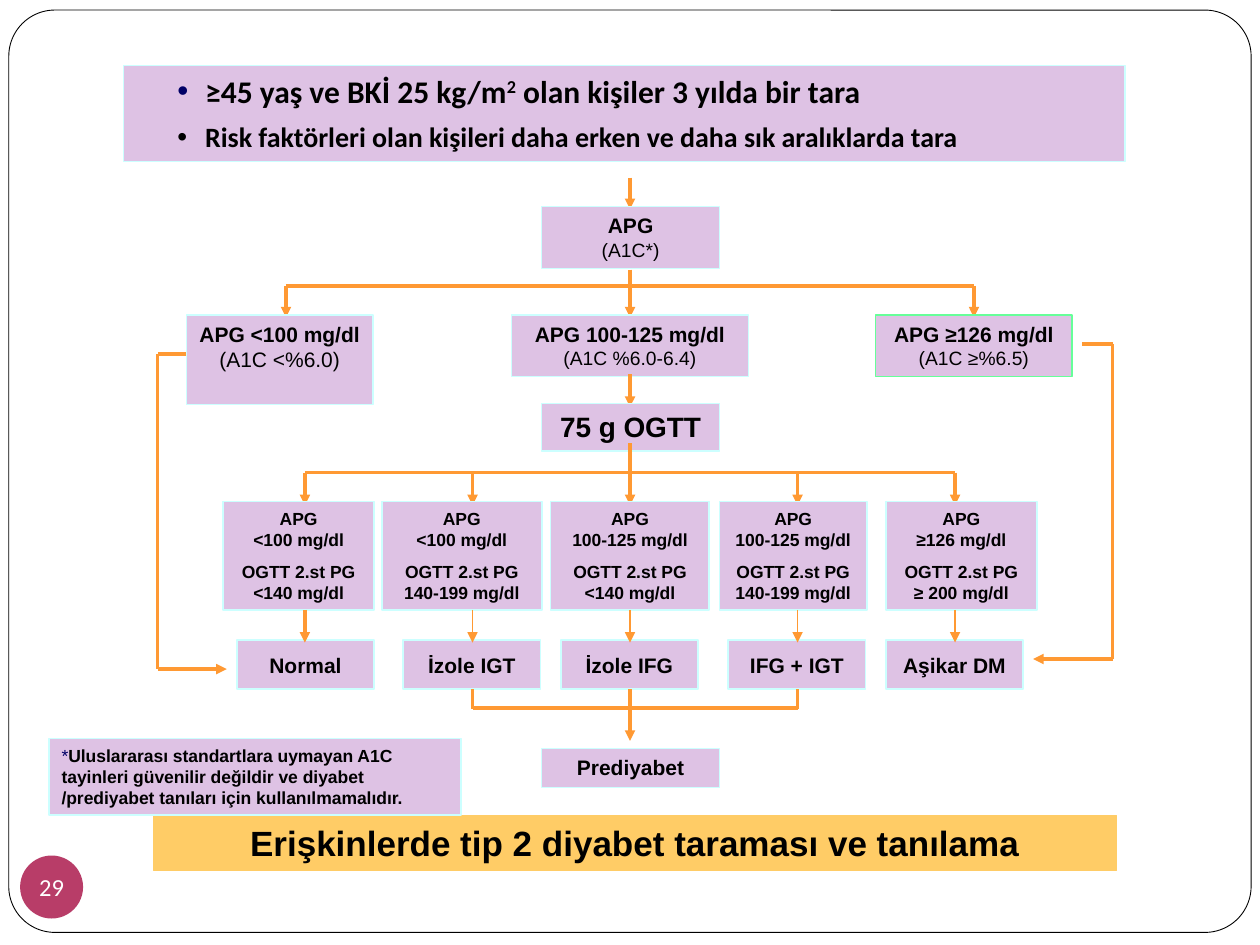
from dataclasses import dataclass

from lxml.etree import SubElement
from pptx import Presentation
from pptx.dml.color import RGBColor
from pptx.enum.shapes import MSO_CONNECTOR, MSO_SHAPE
from pptx.enum.text import MSO_ANCHOR, PP_ALIGN
from pptx.oxml.ns import qn
from pptx.util import Inches, Pt


@dataclass(frozen=True)
class Theme:
    lilac: str = "DEC2E4"
    pale: str = "CCFFFF"
    green: str = "66FF99"
    orange: str = "FF9933"
    amber: str = "FFCC66"
    berry: str = "B83D68"
    navy: str = "000066"
    black: str = "000000"
    white: str = "FFFFFF"
    sans: str = "Arial"
    humanist: str = "Calibri"
    title: int = 20
    lead: int = 18
    large: int = 16
    badge: int = 14
    body: int = 12
    detail: int = 11
    small: int = 10


THEME = Theme()
COLUMNS = (2.42, 3.75, 5, 6.33, 7.58)
CENTER = 5


def rgb(code):
    return RGBColor.from_string(code)


def style_font(font, size, bold=False, color=THEME.black, name=THEME.sans):
    font.size = Pt(size)
    font.bold = bold
    font.name = name
    font.color.rgb = rgb(color)


def add_box(page, bounds, fill=THEME.lilac, line=THEME.pale, weight=0.75,
            kind=MSO_SHAPE.RECTANGLE, anchor=MSO_ANCHOR.TOP):
    box = page.shapes.add_shape(kind, *map(Inches, bounds))
    box.shadow.inherit = False
    if fill:
        box.fill.solid()
        box.fill.fore_color.rgb = rgb(fill)
    else:
        box.fill.background()
    if line:
        box.line.color.rgb = rgb(line)
        box.line.width = Pt(weight)
    else:
        box.line.fill.background()
    box.text_frame.word_wrap = True
    box.text_frame.vertical_anchor = anchor
    return box


def next_para(box, index):
    frame = box.text_frame
    return frame.add_paragraph() if index else frame.paragraphs[0]


def write_lines(box, lines):
    for index, (text, size, bold, after) in enumerate(lines):
        para = next_para(box, index)
        para.text = text
        para.alignment = PP_ALIGN.CENTER
        para.space_after = Pt(after)
        style_font(para.font, size, bold)


def add_node(page, bounds, heading, detail="", size=THEME.body,
             detail_size=THEME.detail, line=THEME.pale):
    box = add_box(page, bounds, line=line)
    lines = [(heading, size, True, 0)]
    if detail:
        lines.append((detail, detail_size, False, 0))
    write_lines(box, lines)


def add_criteria(page, left, width, fasting, two_hour):
    box = add_box(page, (left, 3.98, width, 0.86), weight=1, anchor=MSO_ANCHOR.MIDDLE)
    lines = (("APG", 0), (fasting, 6), (f"OGTT 2.st PG\v{two_hour}", 0))
    write_lines(box, [(text, THEME.small, True, after) for text, after in lines])


def add_result(page, left, text):
    box = add_box(page, (left, 5.08, 1.09, 0.39), weight=1, anchor=MSO_ANCHOR.MIDDLE)
    write_lines(box, [(text, THEME.body, True, 0)])


def add_line(page, start, end, arrow=False, weight=2):
    line = page.shapes.add_connector(
        MSO_CONNECTOR.STRAIGHT, *map(Inches, (*start, *end)))
    line.line.color.rgb = rgb(THEME.orange)
    line.line.width = Pt(weight)
    if arrow:
        SubElement(line.line._get_or_add_ln(), qn("a:tailEnd"), type="triangle")
    SubElement(line._element.spPr, qn("a:effectLst"))


def add_drops(page, columns, top, bottom, arrow=True, weight=2):
    for column in columns:
        add_line(page, (column, top), (column, bottom), arrow, weight)


def add_path(page, points):
    last = len(points) - 2
    for index, (start, end) in enumerate(zip(points, points[1:])):
        add_line(page, start, end, arrow=index == last)


def set_bullet(para, color):
    properties = para._p.get_or_add_pPr()
    properties.set("marL", str(Inches(0.55)))
    properties.set("indent", str(-Inches(0.22)))
    tint = SubElement(properties, qn("a:buClr"))
    SubElement(tint, qn("a:srgbClr"), val=color)
    SubElement(properties, qn("a:buFont"), typeface=THEME.sans)
    SubElement(properties, qn("a:buChar"), char="•")


def add_guidance(page):
    box = add_box(page, (0.98, 0.52, 7.95, 0.76))
    items = (
        (("≥45 yaş ve BKİ 25 kg/m", "2", " olan kişiler 3 yılda bir tara"),
         THEME.lead, THEME.navy),
        (("Risk faktörleri olan kişileri daha erken ve daha sık aralıklarda tara",),
         THEME.large, THEME.black),
    )
    for index, (parts, size, bullet_color) in enumerate(items):
        para = next_para(box, index)
        para.alignment = PP_ALIGN.LEFT
        para.space_after = Pt(6)
        set_bullet(para, bullet_color)
        style_font(para.font, size, True, name=THEME.humanist)
        for part in parts:
            span = para.add_run()
            span.text = part
            if part == "2":
                span._r.get_or_add_rPr().set("baseline", "30000")


def add_footnote(page):
    box = add_box(page, (0.39, 5.86, 3.27, 0.61))
    para = box.text_frame.paragraphs[0]
    para.alignment = PP_ALIGN.LEFT
    note = ("Uluslararası standartlara uymayan A1C tayinleri güvenilir değildir ve "
            "diyabet /prediyabet tanıları için kullanılmamalıdır.")
    for text, bold, color in (("*", False, THEME.navy), (note, True, THEME.black)):
        span = para.add_run()
        span.text = text
        style_font(span.font, THEME.small, bold, color)


def format_title(page):
    title = page.shapes.title
    title.left, title.top, title.width, title.height = map(
        Inches, (1.22, 6.47, 7.64, 0.44))
    title.fill.solid()
    title.fill.fore_color.rgb = rgb(THEME.amber)
    title.line.color.rgb = rgb(THEME.amber)
    title.line.width = Pt(0.75)
    title.text_frame.vertical_anchor = MSO_ANCHOR.MIDDLE
    write_lines(title, [("Erişkinlerde tip 2 diyabet taraması ve tanılama",
                         THEME.title, True, 0)])


def add_page_number(page):
    badge = add_box(page, (0.16, 6.79, 0.5, 0.5), THEME.berry, None,
                    kind=MSO_SHAPE.OVAL, anchor=MSO_ANCHOR.MIDDLE)
    frame = badge.text_frame
    frame.margin_left = frame.margin_right = frame.margin_top = frame.margin_bottom = 0
    frame.word_wrap = False
    para = frame.paragraphs[0]
    para.text = "29"
    para.alignment = PP_ALIGN.CENTER
    style_font(para.font, THEME.badge, color=THEME.white, name=THEME.humanist)


def add_screening(page):
    add_drops(page, [CENTER], 1.41, 1.66)
    add_drops(page, [CENTER], 2.14, 2.43, arrow=False)
    add_line(page, (2.27, 2.27), (7.73, 2.27))
    add_drops(page, (2.27, CENTER, 7.73), 2.27, 2.52)
    add_node(page, (4.3, 1.64, 1.41, 0.49), "APG", "(A1C*)")
    add_node(page, (4.06, 2.5, 1.88, 0.49), "APG 100-125 mg/dl", "(A1C %6.0-6.4)")
    add_node(page, (1.48, 2.5, 1.48, 0.71), "APG <100 mg/dl", "(A1C <%6.0)",
             detail_size=THEME.body)
    add_node(page, (6.95, 2.5, 1.56, 0.49), "APG ≥126 mg/dl", "(A1C ≥%6.5)",
             line=THEME.green)


def add_diagnosis(page):
    add_drops(page, [CENTER], 2.97, 3.23)
    add_node(page, (4.3, 3.2, 1.41, 0.38), "75 g OGTT", size=THEME.large)
    add_drops(page, [CENTER], 3.52, 3.76, arrow=False)
    add_line(page, (COLUMNS[0], 3.75), (COLUMNS[-1], 3.75))
    add_drops(page, COLUMNS, 3.75, 4.01)
    groups = (
        (1.77, 1.2, "<100 mg/dl", "<140 mg/dl", 1.88, "Normal"),
        (3.03, 1.27, "<100 mg/dl", "140-199 mg/dl", 3.2, "İzole IGT"),
        (4.37, 1.26, "100-125 mg/dl", "<140 mg/dl", 4.45, "İzole IFG"),
        (5.71, 1.17, "100-125 mg/dl", "140-199 mg/dl", 5.78, "IFG + IGT"),
        (7.03, 1.2, "≥126 mg/dl", "≥ 200 mg/dl", 7.03, "Aşikar DM"),
    )
    for left, width, fasting, two_hour, result_left, result in groups:
        add_criteria(page, left, width, fasting, two_hour)
        add_result(page, result_left, result)
    add_drops(page, COLUMNS[:1], 4.84, 5.1)
    add_drops(page, COLUMNS[1:], 4.84, 5.1, weight=0.75)
    add_path(page, ((1.48, 2.81), (1.25, 2.81), (1.25, 5.31), (1.8, 5.31)))
    add_path(page, ((8.59, 2.73), (8.83, 2.73), (8.83, 5.23), (8.2, 5.23)))
    add_drops(page, COLUMNS[1:4], 5.47, 5.63, arrow=False)
    add_line(page, (COLUMNS[1], 5.62), (COLUMNS[3], 5.62))
    add_drops(page, [CENTER], 5.62, 5.88)
    add_node(page, (4.3, 5.94, 1.41, 0.31), "Prediyabet")


def main():
    deck = Presentation()
    deck.slide_width, deck.slide_height = Inches(10), Inches(7.5)
    page = deck.slides.add_slide(deck.slide_layouts[5])
    format_title(page)
    frame = add_box(page, (0.07, 0.08, 9.86, 7.32), None, THEME.black, 0.5,
                    MSO_SHAPE.ROUNDED_RECTANGLE)
    frame.adjustments[0] = 0.05
    add_guidance(page)
    add_screening(page)
    add_diagnosis(page)
    add_footnote(page)
    add_page_number(page)
    deck.save("out.pptx")


if __name__ == "__main__":
    main()
